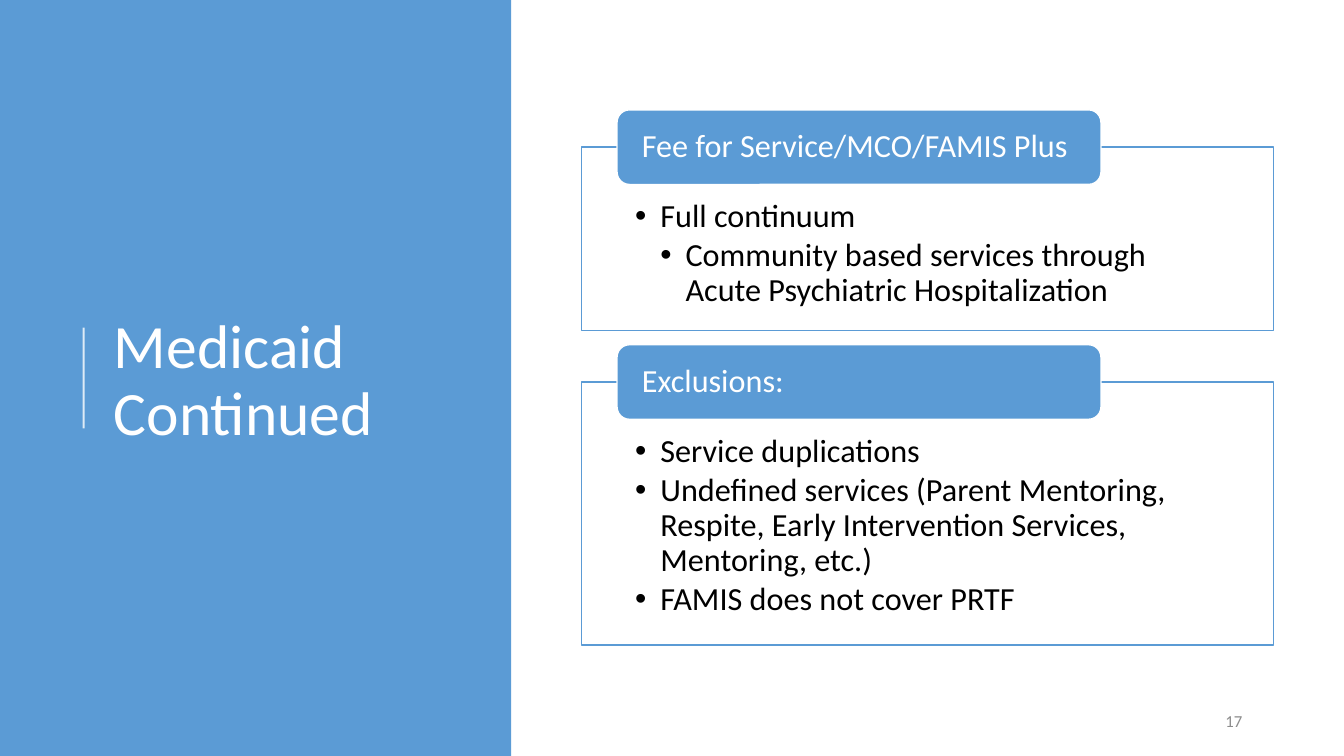
from dataclasses import dataclass

from lxml import etree
from pptx import Presentation
from pptx.dml.color import RGBColor
from pptx.enum.shapes import MSO_CONNECTOR, MSO_SHAPE
from pptx.enum.text import MSO_ANCHOR, PP_ALIGN
from pptx.oxml.ns import qn
from pptx.util import Inches, Pt

RECT = MSO_SHAPE.RECTANGLE
ROUND = MSO_SHAPE.ROUNDED_RECTANGLE
STRAIGHT = MSO_CONNECTOR.STRAIGHT
TOP, MIDDLE = MSO_ANCHOR.TOP, MSO_ANCHOR.MIDDLE
LEFT, RIGHT = PP_ALIGN.LEFT, PP_ALIGN.RIGHT


@dataclass(frozen=True)
class Theme:
    font: str = "Calibri"
    blue: RGBColor = RGBColor(0x5B, 0x9B, 0xD5)
    white: RGBColor = RGBColor(0xFF, 0xFF, 0xFF)
    black: RGBColor = RGBColor(0, 0, 0)
    gray: RGBColor = RGBColor(0x8C, 0x8C, 0x8C)
    title: int = 44
    body: int = 23
    number: int = 12


THEME = Theme()

# Each panel: top, height, heading, list of (level, text)
PANELS = [
    (1.46, 1.82, "Fee for Service/MCO/FAMIS Plus", [
        (1, "Full continuum"),
        (2, "Community based services through Acute Psychiatric Hospitalization"),
    ]),
    (3.79, 2.61, "Exclusions:", [
        (1, "Service duplications"),
        (1, "Undefined services (Parent Mentoring, Respite, "
            "Early Intervention Services, Mentoring, etc.)"),
        (1, "FAMIS does not cover PRTF"),
    ]),
]


def set_alpha(fill, percent):
    """Make a solid fill element partly transparent."""
    color = fill.find(".//" + qn("a:srgbClr"))
    etree.SubElement(color, qn("a:alpha"), val=str(percent * 1000))


def add_box(slide, kind, box, fill, line=None):
    shape = slide.shapes.add_shape(kind, *map(Inches, box))
    shape.shadow.inherit = False
    shape.fill.solid()
    shape.fill.fore_color.rgb = fill
    if line is None:
        shape.line.fill.background()
    else:
        shape.line.color.rgb = line
        shape.line.width = Pt(1)
    return shape


def set_frame(shape, anchor, insets=(0.1, 0.05, 0.1, 0.05)):
    frame = shape.text_frame
    frame.word_wrap = True
    frame.vertical_anchor = anchor
    (frame.margin_left, frame.margin_top,
     frame.margin_right, frame.margin_bottom) = map(Inches, insets)
    return frame


def add_run(para, text, size, color, align=LEFT, spacing=0.9):
    para.alignment = align
    para.line_spacing = spacing
    run = para.add_run()
    run.text = text
    run.font.name = THEME.font
    run.font.size = Pt(size)
    run.font.color.rgb = color


def set_bullet(para, level):
    props = para._p.get_or_add_pPr()
    props.set("marL", str(Inches(0.25 * level)))
    props.set("indent", str(Inches(-0.25)))
    etree.SubElement(props, qn("a:buFont"), typeface="Arial")
    etree.SubElement(props, qn("a:buChar"), char="•")


def add_side(slide, box):
    """Blue side band with a thin rule and the slide title."""
    left, top, _, height = box
    add_box(slide, RECT, box, THEME.blue)
    x, mid = left + 0.83, top + height / 2
    rule = slide.shapes.add_connector(
        STRAIGHT, Inches(x), Inches(mid + 0.5), Inches(x), Inches(mid - 0.5))
    rule.line.color.rgb = THEME.white
    rule.line.width = Pt(1.5)
    set_alpha(rule.line._ln, 80)
    etree.SubElement(rule._element.spPr, qn("a:effectLst"))
    title = slide.shapes.add_textbox(
        Inches(left + 1.03), Inches(top + 0.78), Inches(3.69), Inches(6.02))
    frame = set_frame(title, MIDDLE)
    add_run(frame.paragraphs[0], "Medicaid Continued", THEME.title, THEME.white)


def add_panel(slide, box, heading, items):
    """Outlined list with a heading tab across its top edge."""
    left, top, _, _ = box
    panel = add_box(slide, RECT, box, THEME.white, THEME.blue)
    set_alpha(panel.fill._xPr, 90)
    frame = set_frame(panel, TOP, (0.53, 0.52, 0.53, 0.18))
    for index, (level, text) in enumerate(items):
        para = frame.add_paragraph() if index else frame.paragraphs[0]
        para.space_after = Pt(3.4)
        add_run(para, text, THEME.body, THEME.black)
        set_bullet(para, level)
    tab = add_box(slide, ROUND, (left + 0.35, top - 0.37, 4.8, 0.74),
                  THEME.blue, THEME.white)
    frame = set_frame(tab, MIDDLE, (0.21, 0, 0.21, 0))
    add_run(frame.paragraphs[0], heading, THEME.body, THEME.white)


def add_number(slide, box):
    shape = slide.shapes.add_textbox(*map(Inches, box))
    para = set_frame(shape, MIDDLE).paragraphs[0]
    add_run(para, "17", THEME.number, THEME.gray, RIGHT, 1.0)


def main():
    deck = Presentation()
    deck.slide_width, deck.slide_height = Inches(13.33), Inches(7.5)
    slide = deck.slides.add_slide(deck.slide_layouts[6])
    add_side(slide, (0, 0, 5.07, 7.5))
    for top, height, heading, items in PANELS:
        add_panel(slide, (5.77, top, 6.86, height), heading, items)
    add_number(slide, (9.42, 6.95, 3, 0.4))
    deck.save("out.pptx")


if __name__ == "__main__":
    main()
